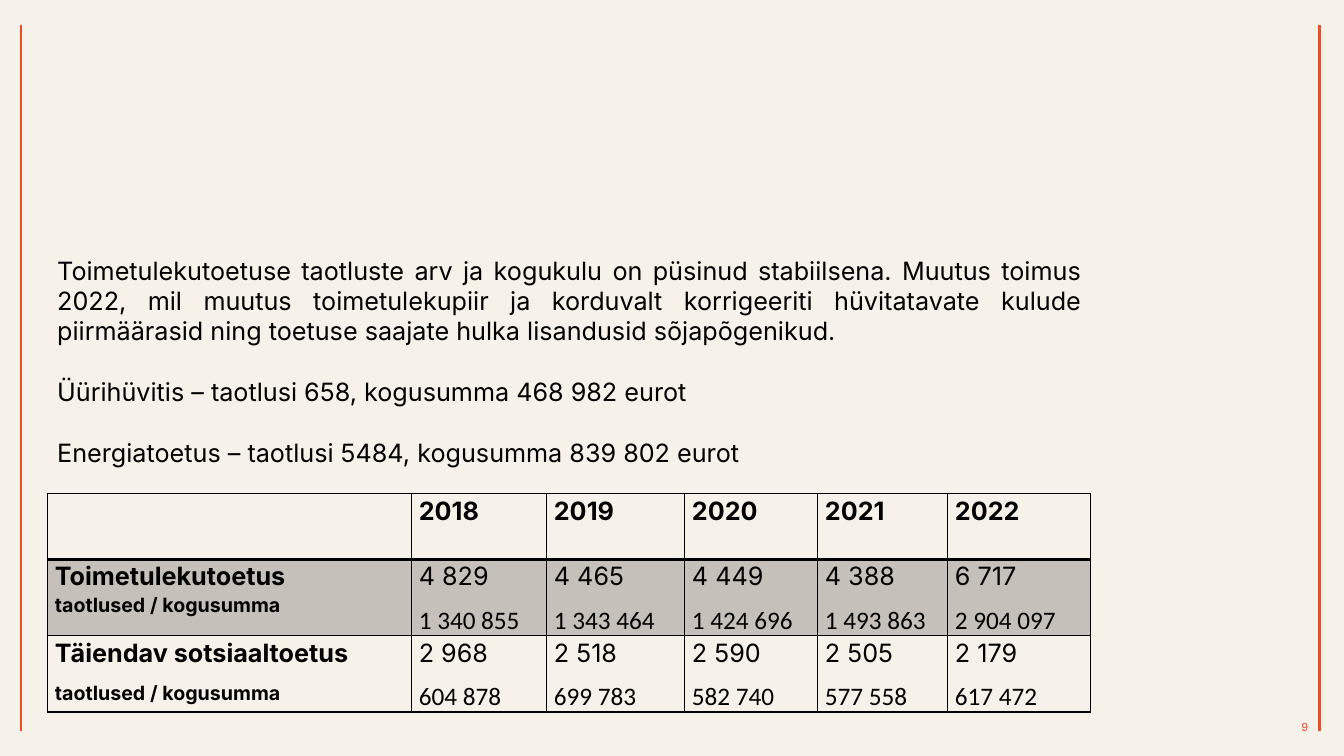
from dataclasses import dataclass

from lxml import etree
from pptx import Presentation
from pptx import util as u
from pptx.dml import color
from pptx.enum import shapes, text
from pptx.oxml import ns

Pt = u.Pt
INK, ACCENT, PAPER = "000000", "F14C2A", "F7F2E9"


@dataclass(frozen=True)
class Line:
    words: str
    size: int = 18
    bold: bool = False
    face: str = "Inter"


@dataclass(frozen=True)
class Benefit:
    name: str
    counts: tuple[str, ...]
    sums: tuple[str, ...]
    shaded: bool
    unit_on_new_paragraph: bool


UNIT = Line("taotlused / kogusumma", 14, True)
YEARS = ("2018", "2019", "2020", "2021", "2022")
BENEFITS = (
    Benefit(
        "Toimetulekutoetus",
        ("4 829", "4 465", "4 449", "4 388", "6 717"),
        ("1 340 855", "1 343 464", "1 424 696", "1 493 863", "2 904 097"),
        True,
        False,
    ),
    Benefit(
        "Täiendav sotsiaaltoetus",
        ("2 968", "2 518", "2 590", "2 505", "2 179"),
        ("604 878", "699 783", "582 740", "577 558", "617 472"),
        False,
        True,
    ),
)
COLUMN_WIDTHS = (260, 96.5, 98.6, 95, 92.9, 102.2)
ROW_HEIGHTS = (47, 54.5, 54.5)
SUMMARY = (
    "Toimetulekutoetuse taotluste arv ja kogukulu on püsinud stabiilsena. "
    "Muutus toimus 2022, mil muutus toimetulekupiir ja korduvalt korrigeeriti "
    "hüvitatavate kulude piirmäärasid ning toetuse saajate hulka lisandusid sõjapõgenikud.",
    "Üürihüvitis – taotlusi 658, kogusumma 468 982 eurot",
    "Energiatoetus – taotlusi 5484, kogusumma 839 802 eurot",
)


def rgb(value: str) -> color.RGBColor:
    return color.RGBColor.from_string(value)


def set_font(font, line: Line, ink: str = INK) -> None:
    font.name, font.size, font.bold = line.face, Pt(line.size), line.bold
    font.color.rgb = rgb(ink)


def draw_rule(slide, x: float) -> None:
    rule = slide.shapes.add_connector(
        shapes.MSO_CONNECTOR.STRAIGHT, Pt(x), Pt(18), Pt(x), Pt(522)
    )
    rule.line.color.rgb = rgb(ACCENT)
    rule.line.width = Pt(1.5)
    etree.SubElement(rule._element.spPr, ns.qn("a:effectLst"))


def draw_summary(slide) -> None:
    frame = slide.shapes.add_textbox(Pt(33.8), Pt(178.6), Pt(746), Pt(181.4)).text_frame
    frame.word_wrap = True
    for index, words in enumerate(SUMMARY):
        paragraph = frame.paragraphs[0] if index == 0 else frame.add_paragraph()
        paragraph.text = words
        paragraph.alignment = text.PP_ALIGN.JUSTIFY
        if index:
            paragraph.space_before = Pt(21.8)
        set_font(paragraph.font, Line(words))


def draw_page_number(slide) -> None:
    frame = slide.shapes.add_textbox(Pt(768.2), Pt(499), Pt(166.3), Pt(28.8)).text_frame
    frame.word_wrap = True
    frame.margin_right = 0
    frame.vertical_anchor = text.MSO_ANCHOR.BOTTOM
    number = frame.paragraphs[0]
    number.text = "9"
    number.alignment = text.PP_ALIGN.RIGHT
    set_font(number.font, Line("9", 8), ACCENT)


def set_borders(cell, top: float, bottom: float) -> None:
    properties = cell._tc.get_or_add_tcPr()
    sides = (("lnL", 1), ("lnR", 1), ("lnT", top), ("lnB", bottom))
    for index, (side, width) in enumerate(sides):
        border = etree.Element(ns.qn(f"a:{side}"), w=str(Pt(width)))
        fill = etree.SubElement(border, ns.qn("a:solidFill"))
        etree.SubElement(fill, ns.qn("a:srgbClr"), val=INK)
        properties.insert(index, border)


def shade(cell) -> None:
    cell.fill.solid()
    cell.fill.fore_color.rgb = rgb(INK)
    tint = cell._tc.tcPr.find(".//" + ns.qn("a:srgbClr"))
    etree.SubElement(tint, ns.qn("a:alpha"), val="20000")


def write_cell(cell, paragraphs: list[list[Line]]) -> None:
    for index, lines in enumerate(paragraphs):
        frame = cell.text_frame
        paragraph = frame.paragraphs[0] if index == 0 else frame.add_paragraph()
        paragraph.line_spacing = 1.07
        paragraph.space_after = Pt(8)
        if len(lines) == 1:
            paragraph.alignment = text.PP_ALIGN.JUSTIFY
            paragraph.text = lines[0].words
            set_font(paragraph.font, lines[0])
            continue
        for position, line in enumerate(lines):
            if position:
                paragraph.add_line_break()
            run = paragraph.add_run()
            run.text = line.words
            set_font(run.font, line)


def benefit_row(benefit: Benefit) -> list[list[list[Line]]]:
    name = Line(benefit.name, bold=True)
    heading = [[name], [UNIT]] if benefit.unit_on_new_paragraph else [[name, UNIT]]
    return [heading] + [
        [[Line(count)], [Line(total, face="Calibri")]]
        for count, total in zip(benefit.counts, benefit.sums)
    ]


def draw_benefits(slide) -> None:
    rows = [[[]] + [[[Line(year, bold=True)]] for year in YEARS]]
    rows += [benefit_row(benefit) for benefit in BENEFITS]
    benefits = slide.shapes.add_table(
        len(rows), len(COLUMN_WIDTHS), Pt(33.8), Pt(352.6),
        Pt(sum(COLUMN_WIDTHS)), Pt(sum(ROW_HEIGHTS)),
    ).table
    benefits.first_row = benefits.horz_banding = False
    for column, width in zip(benefits.columns, COLUMN_WIDTHS):
        column.width = Pt(width)
    for row, height in zip(benefits.rows, ROW_HEIGHTS):
        row.height = Pt(height)
    for r, contents in enumerate(rows):
        for c, paragraphs in enumerate(contents):
            cell = benefits.cell(r, c)
            cell.margin_left = cell.margin_right = Pt(5.4)
            cell.margin_top = cell.margin_bottom = 0
            write_cell(cell, paragraphs)
            if r and BENEFITS[r - 1].shaded:
                shade(cell)
            else:
                cell.fill.background()
            set_borders(cell, 2 if r == 1 else 1, 2 if r == 0 else 1)


def main() -> None:
    deck = Presentation()
    deck.slide_width, deck.slide_height = Pt(960), Pt(540)
    slide = deck.slides.add_slide(deck.slide_layouts[6])
    slide.background.fill.solid()
    slide.background.fill.fore_color.rgb = rgb(PAPER)
    for x in (15.1, 942.5):
        draw_rule(slide, x)
    draw_page_number(slide)
    draw_benefits(slide)
    draw_summary(slide)
    deck.save("out.pptx")


if __name__ == "__main__":
    main()
